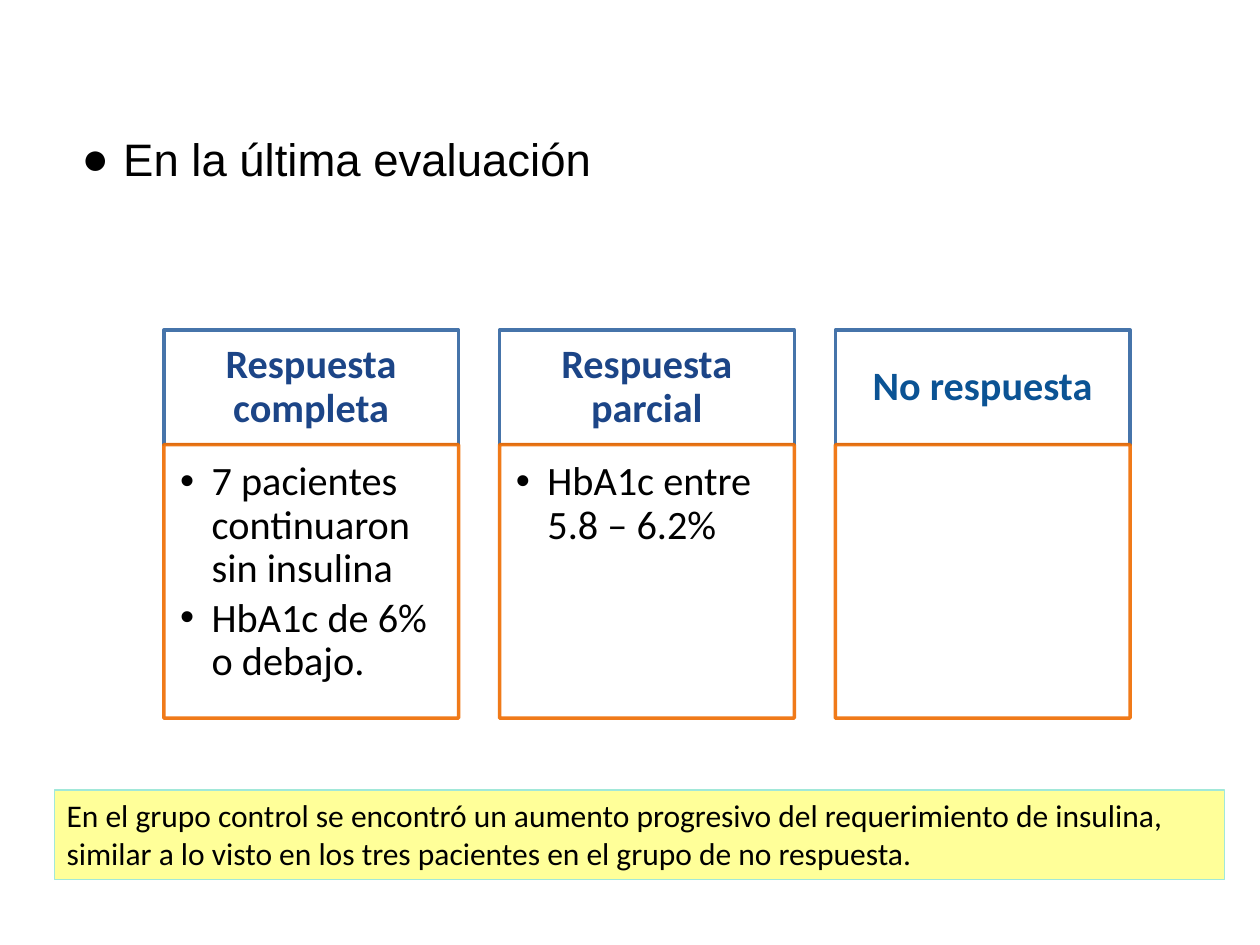
from dataclasses import dataclass

from lxml.etree import SubElement
from pptx import Presentation
from pptx.dml.color import RGBColor
from pptx.enum.shapes import MSO_SHAPE
from pptx.enum.text import MSO_ANCHOR, PP_ALIGN
from pptx.oxml.ns import qn
from pptx.util import Inches, Pt

COLORS = {
    "black": "000000",
    "white": "FFFFFF",
    "header_line": "4674AA",
    "body_line": "EF6C00",
    "navy": "1C4587",
    "blue": "0B5394",
    "note_fill": "FFFF99",
    "note_line": "A1E8D9",
}


@dataclass
class TextStyle:
    size: float
    color: str = "black"
    font: str = "Calibri"
    bold: bool = False
    line_spacing: float = 1.0
    space_before: float = 0
    align: PP_ALIGN = PP_ALIGN.LEFT


@dataclass
class ResponseGroup:
    title: str
    title_color: str
    findings: tuple[str, ...] = ()


GROUPS = [
    ResponseGroup("Respuesta completa", "navy",
                  ("7 pacientes continuaron sin insulina", "HbA1c de 6% o debajo.")),
    ResponseGroup("Respuesta parcial", "navy", ("HbA1c entre 5.8 – 6.2%",)),
    ResponseGroup("No respuesta", "blue"),
]
COLUMN_LEFT, COLUMN_STEP, COLUMN_WIDTH = 1.3, 2.665, 2.34
HEADER_TOP, HEADER_HEIGHT, BODY_HEIGHT = 2.62, 0.91, 2.17


def rgb(name: str) -> RGBColor:
    return RGBColor.from_string(COLORS[name])


def add_box(page, left: float, top: float, width: float, height: float,
            fill: str, line: str, line_width: float):
    box = page.shapes.add_shape(MSO_SHAPE.RECTANGLE, Inches(left), Inches(top),
                                Inches(width), Inches(height))
    box.shadow.inherit = False
    box.fill.solid()
    box.fill.fore_color.rgb = rgb(fill)
    box.line.color.rgb = rgb(line)
    box.line.width = Pt(line_width)
    return box


def set_opacity(box, percent: int) -> None:
    """Apply the same opacity to the fill and the outline."""
    for color in box._element.spPr.iter(qn("a:srgbClr")):
        SubElement(color, qn("a:alpha"), val=str(percent * 1000))


def add_bullet(paragraph, symbol: str, margin: float, indent: float) -> None:
    properties = paragraph._p.get_or_add_pPr()
    properties.set("marL", str(Inches(margin)))
    properties.set("indent", str(Inches(indent)))
    color = SubElement(properties, qn("a:buClr"))
    SubElement(color, qn("a:srgbClr"), val=COLORS["black"])
    SubElement(properties, qn("a:buFont"), typeface="Arial")
    SubElement(properties, qn("a:buChar"), char=symbol)


def write_text(box, lines: tuple[str, ...], style: TextStyle,
               insets: tuple[float, float, float, float] = (0.1, 0.05, 0.1, 0.05),
               anchor: MSO_ANCHOR = MSO_ANCHOR.TOP) -> None:
    frame = box.text_frame
    frame.word_wrap = True
    frame.vertical_anchor = anchor
    (frame.margin_left, frame.margin_top,
     frame.margin_right, frame.margin_bottom) = map(Inches, insets)
    frame.text = "\n".join(lines)
    for index, paragraph in enumerate(frame.paragraphs):
        paragraph.alignment = style.align
        paragraph.line_spacing = style.line_spacing
        paragraph.space_before = Pt(style.space_before if index else 0)
        for span in paragraph.runs:
            span.font.size = Pt(style.size)
            span.font.name = style.font
            span.font.bold = style.bold
            span.font.color.rgb = rgb(style.color)


def add_group(page, left: float, group: ResponseGroup) -> None:
    header = add_box(page, left, HEADER_TOP, COLUMN_WIDTH, HEADER_HEIGHT,
                     "white", "header_line", 2)
    write_text(header, (group.title,),
               TextStyle(23, group.title_color, bold=True, line_spacing=0.9,
                         align=PP_ALIGN.CENTER),
               (0.18, 0.1, 0.18, 0.1), MSO_ANCHOR.MIDDLE)

    body = add_box(page, left, HEADER_TOP + HEADER_HEIGHT, COLUMN_WIDTH, BODY_HEIGHT,
                   "white", "body_line", 2)
    set_opacity(body, 90)
    if group.findings:
        write_text(body, group.findings,
                   TextStyle(23, line_spacing=0.9, space_before=3.5),
                   (0.13, 0.13, 0.18, 0.2))
        for paragraph in body.text_frame.paragraphs:
            add_bullet(paragraph, "•", 0.25, -0.25)


def main() -> None:
    deck = Presentation()
    deck.slide_width, deck.slide_height = Inches(10), Inches(7.5)
    page = deck.slides.add_slide(deck.slide_layouts[6])

    # Opening statement
    intro = page.shapes.add_textbox(Inches(0.5), Inches(0.93), Inches(9), Inches(5.77))
    write_text(intro, ("En la última evaluación",),
               TextStyle(26, font="Arial", line_spacing=1.15))
    add_bullet(intro.text_frame.paragraphs[0], "●", 0.38, -0.33)

    # Response columns
    for index, group in enumerate(GROUPS):
        add_group(page, COLUMN_LEFT + index * COLUMN_STEP, group)

    # Note on the control group
    note = add_box(page, 0.43, 6.27, 9.29, 0.71, "note_fill", "note_line", 0.75)
    write_text(note, ("En el grupo control se encontró un aumento progresivo del "
                      "requerimiento de insulina, similar a lo visto en los tres "
                      "pacientes en el grupo de no respuesta.",), TextStyle(18))

    deck.save("out.pptx")


if __name__ == "__main__":
    main()
